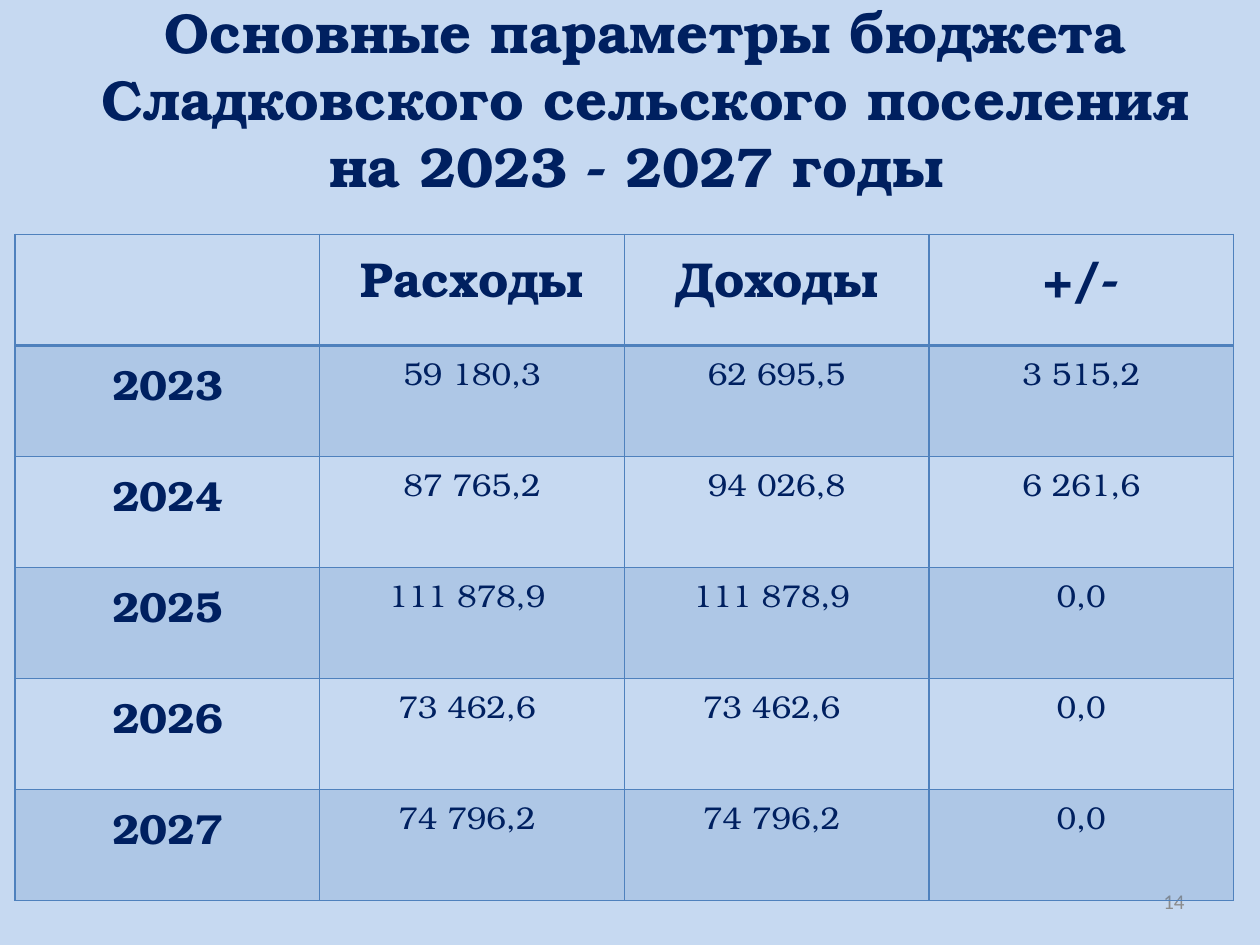
from dataclasses import dataclass

from pptx import Presentation
from pptx.dml.color import RGBColor
from pptx.enum.text import MSO_ANCHOR as Anchor, MSO_AUTO_SIZE as AutoSize, PP_ALIGN as Align
from pptx.oxml import parse_xml
from pptx.oxml.ns import nsdecls, qn
from pptx.util import Inches, Pt

SERIF = "TeX Gyre Bonum"
NAVY, BLUE, PALE, GRAY = "002060", "4F81BD", "C6D9F1", "8C8C8C"


@dataclass
class BudgetYear:
    year: str
    expenses: str
    income: str
    balance: str

    def cells(self) -> list[str]:
        return [self.year, self.expenses, self.income, self.balance]


HEADERS = ["", "Расходы", "Доходы", "+/-"]
BUDGET = [
    BudgetYear("2023", "59 180,3", "62 695,5", "3 515,2"),
    BudgetYear("2024", "87 765,2", "94 026,8", "6 261,6"),
    BudgetYear("2025", "111 878,9 ", "111 878,9 ", "0,0"),
    BudgetYear("2026", "73 462,6 ", "73 462,6 ", "0,0"),
    BudgetYear("2027", "74 796,2 ", "74 796,2 ", "0,0"),
]


def color(value: str) -> RGBColor:
    return RGBColor.from_string(value)


def write(frame, text: str, *, size: float, bold: bool = False, font: str = SERIF,
          fill: str = NAVY, align=Align.CENTER) -> None:
    paragraph = frame.paragraphs[0]
    paragraph.alignment = align
    run = paragraph.add_run()
    run.text = text
    run.font.size, run.font.bold, run.font.name = Pt(size), bold, font
    run.font.color.rgb = color(fill)


def place(shape, left: float, top: float, width: float, height: float) -> None:
    shape.left, shape.top = Inches(left), Inches(top)
    shape.width, shape.height = Inches(width), Inches(height)
    frame = shape.text_frame
    frame.word_wrap, frame.auto_size = True, AutoSize.NONE
    frame.vertical_anchor = Anchor.MIDDLE


def set_borders(cell, **widths: float) -> None:
    """Border lines must come before the fill in the cell properties."""
    properties = cell._tc.get_or_add_tcPr()
    for index, (side, width) in enumerate(widths.items()):
        properties.insert(index, parse_xml(
            f'<a:{side} {nsdecls("a")} w="{Pt(width)}"><a:solidFill>'
            f'<a:srgbClr val="{BLUE}"/></a:solidFill></a:{side}>'))


def set_band(cell, banded: bool) -> None:
    """Tint banded cells with 20% blue and leave the others clear."""
    if not banded:
        cell.fill.background()
        return
    cell.fill.solid()
    cell.fill.fore_color.rgb = color(BLUE)
    tint = cell._tc.tcPr.find(f'{qn("a:solidFill")}/{qn("a:srgbClr")}')
    tint.append(parse_xml(f'<a:alpha {nsdecls("a")} val="20000"/>'))


def add_budget_table(slide) -> None:
    rows = [HEADERS] + [entry.cells() for entry in BUDGET]
    table = slide.shapes.add_table(len(rows), len(HEADERS), Inches(0.12), Inches(1.86),
                                   Inches(9.67), Inches(5.29)).table
    for row_index, row in enumerate(rows):
        for column_index, text in enumerate(row):
            cell = table.cell(row_index, column_index)
            set_band(cell, row_index % 2 == 1)
            set_borders(cell, lnL=1, lnR=1, lnT=2 if row_index == 1 else 1,
                        lnB=2 if row_index == 0 else 1)
            size = 28 if row_index == 0 else 24 if column_index == 0 else 18
            if text:
                write(cell.text_frame, text, size=size, bold=size > 18)


def main() -> None:
    presentation = Presentation()
    presentation.slide_width, presentation.slide_height = Inches(10), Inches(7.5)
    slide = presentation.slides.add_slide(presentation.slide_layouts[5])
    slide.background.fill.solid()
    slide.background.fill.fore_color.rgb = color(PALE)

    # Title
    title = slide.shapes.title
    place(title, 0.46, 0.19, 9.33, 1.18)
    write(title.text_frame, "Основные параметры бюджета Сладковского сельского поселения "
          "на 2023 - 2027 годы ", size=32, bold=True)

    # Slide number
    number = slide.shapes.add_textbox(0, 0, 0, 0)
    place(number, 7.17, 6.95, 2.33, 0.4)
    write(number.text_frame, "14", size=12, font="Calibri", fill=GRAY, align=Align.RIGHT)

    # Budget by year
    add_budget_table(slide)

    presentation.save("out.pptx")


if __name__ == "__main__":
    main()
